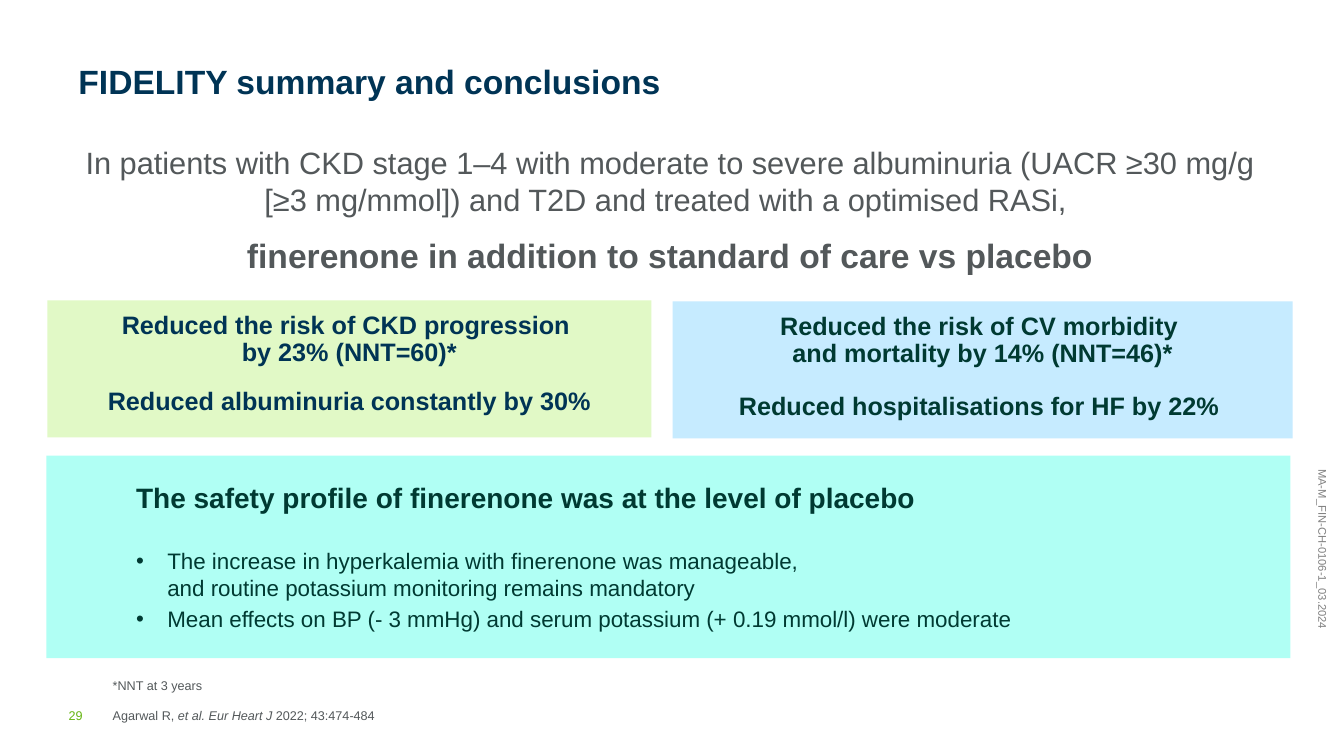
import pptx
import pptx.util
import pptx.dml.color
import pptx.enum.shapes
import pptx.enum.text
from lxml import etree

Inches, Pt = pptx.util.Inches, pptx.util.Pt
RGBColor = pptx.dml.color.RGBColor
ALIGN = pptx.enum.text.PP_ALIGN
ANCHOR = pptx.enum.text.MSO_ANCHOR

NAVY = RGBColor(0x00, 0x34, 0x55)
FOREST = RGBColor(0x00, 0x3A, 0x32)
GREY = RGBColor(0x53, 0x58, 0x5A)
LIGHT_GREY = RGBColor(0x80, 0x80, 0x80)
LEAF = RGBColor(0x66, 0xB5, 0x12)
PALE_GREEN = RGBColor(0xE1, 0xF9, 0xC6)
PALE_BLUE = RGBColor(0xC6, 0xEB, 0xFF)
PALE_TEAL = RGBColor(0xB0, 0xFF, 0xF4)

FONT = "Arial"
TEXT_INSETS = (0.1, 0.05, 0.1, 0.05)
CARD_INSETS = (0.39, 0.12, 0.39, 0.05)

# Each paragraph: (text or list of (text, italic) runs, format)
TITLE = [("FIDELITY summary and conclusions", dict(size=24, bold=True, color=NAVY, spacing=0.9))]
INTRO = [
    ("In patients with CKD stage 1–4 with moderate to severe albuminuria (UACR ≥30 mg/g "
     "[≥3 mg/mmol]) and T2D and treated with a optimised RASi, ",
     dict(size=22, align=ALIGN.CENTER)),
    ("finerenone in addition to standard of care vs placebo",
     dict(size=24, bold=True, align=ALIGN.CENTER, before=12)),
]
CARD = dict(size=18, bold=True, align=ALIGN.CENTER, spacing=0.9)
KIDNEY = [
    ("Reduced the risk of CKD progression ", dict(CARD, color=NAVY)),
    ("by 23% (NNT=60)*", dict(CARD, color=NAVY)),
    ("Reduced albuminuria constantly by 30%", dict(CARD, color=NAVY, before=15.3)),
]
HEART = [
    ("Reduced the risk of CV morbidity \nand mortality by 14% (NNT=46)*", dict(CARD, color=FOREST)),
    ("Reduced hospitalisations for HF by 22% ", dict(CARD, color=FOREST, before=18.6)),
]
BULLET = dict(size=16, color=FOREST, indent=0.81, hanging=0.31, spacing=0.9)
SAFETY = [
    ("The safety profile of finerenone was at the level of placebo",
     dict(size=20, bold=True, color=FOREST, indent=0.5, spacing=0.9)),
    ("The increase in hyperkalemia with finerenone was manageable, \n"
     "and routine potassium monitoring remains mandatory",
     dict(BULLET, before=23.7, spacing=1.0)),
    ("Mean effects on BP (- 3 mmHg) and serum potassium (+ 0.19 mmol/l) were moderate ",
     dict(BULLET, before=3, spacing=1.0)),
]
FOOTNOTES = [
    ("*NNT at 3 years", dict(size=9)),
    ([("Agarwal R,", False), (" et al. Eur Heart J", True), (" 2022; 43:474-484", False)],
     dict(size=9, before=10.35)),
]
PAGE_NUMBER = [("29", dict(size=9, color=LEAF))]
DOCUMENT_CODE = [("MA-M_FIN-CH-0106-1_03.2024", dict(size=8, color=LIGHT_GREY))]

# (left, top, width, height), fill, insets, paragraphs
CARDS = [
    ((0.47, 2.98, 5.99, 1.36), PALE_GREEN, CARD_INSETS, KIDNEY),
    ((6.67, 2.99, 6.15, 1.36), PALE_BLUE, CARD_INSETS, HEART),
    ((0.46, 4.52, 12.34, 2.01), PALE_TEAL, (0.39, 0.28, 0.39, 0.05), SAFETY),
]


def write(p, text, size, color=GREY, bold=False, align=ALIGN.LEFT, before=0,
          spacing=1.0, indent=0, hanging=0):
    """Fill one paragraph; a hanging indent gives it a bullet."""
    p.alignment = align
    p.line_spacing = spacing
    p.space_before = Pt(before)
    pPr = p._p.get_or_add_pPr()
    pPr.set("marL", str(Inches(indent)))
    pPr.set("indent", str(-Inches(hanging)))
    if hanging:
        ns = pPr.nsmap["a"]
        etree.SubElement(pPr, f"{{{ns}}}buFont").set("typeface", FONT)
        etree.SubElement(pPr, f"{{{ns}}}buChar").set("char", "•")
    runs = [(text, False)] if isinstance(text, str) else text
    for run_text, italic in runs:
        for i, line in enumerate(run_text.split("\n")):
            if i:
                p.add_line_break()
            r = p.add_run()
            r.text = line
            r.font.name, r.font.size = FONT, Pt(size)
            r.font.bold, r.font.italic = bold, italic
            r.font.color.rgb = color


def fill_frame(sp, paragraphs, insets=TEXT_INSETS, anchor=ANCHOR.TOP):
    tf = sp.text_frame
    tf.word_wrap = True
    tf.vertical_anchor = anchor
    tf.margin_left, tf.margin_top, tf.margin_right, tf.margin_bottom = map(Inches, insets)
    for i, (text, style) in enumerate(paragraphs):
        write(tf.add_paragraph() if i else tf.paragraphs[0], text, **style)


def add_text(s, box, paragraphs, **frame):
    sp = s.shapes.add_textbox(*map(Inches, box))
    fill_frame(sp, paragraphs, **frame)
    return sp


def main():
    prs = pptx.Presentation()
    prs.slide_width, prs.slide_height = Inches(13.33), Inches(7.5)
    s = prs.slides.add_slide(prs.slide_layouts[6])

    add_text(s, (11.9, 5.48, 2.26, 0.41), DOCUMENT_CODE).rotation = 90
    add_text(s, (1.02, 6.68, 11.37, 0.54), FOOTNOTES, anchor=ANCHOR.BOTTOM)
    add_text(s, (0.68, 6.82, 0.34, 0.4), PAGE_NUMBER, anchor=ANCHOR.BOTTOM,
             insets=(0, 0.05, 0.1, 0.05))
    add_text(s, (0.68, 0.6, 7.15, 0.61), TITLE)
    add_text(s, (0.68, 1.38, 11.93, 5.12), INTRO)

    for box, fill, insets, paragraphs in CARDS:
        sp = s.shapes.add_shape(pptx.enum.shapes.MSO_SHAPE.RECTANGLE, *map(Inches, box))
        sp.shadow.inherit = False
        sp.fill.solid()
        sp.fill.fore_color.rgb = fill
        sp.line.fill.background()
        fill_frame(sp, paragraphs, insets=insets)

    prs.save("out.pptx")


if __name__ == "__main__":
    main()
